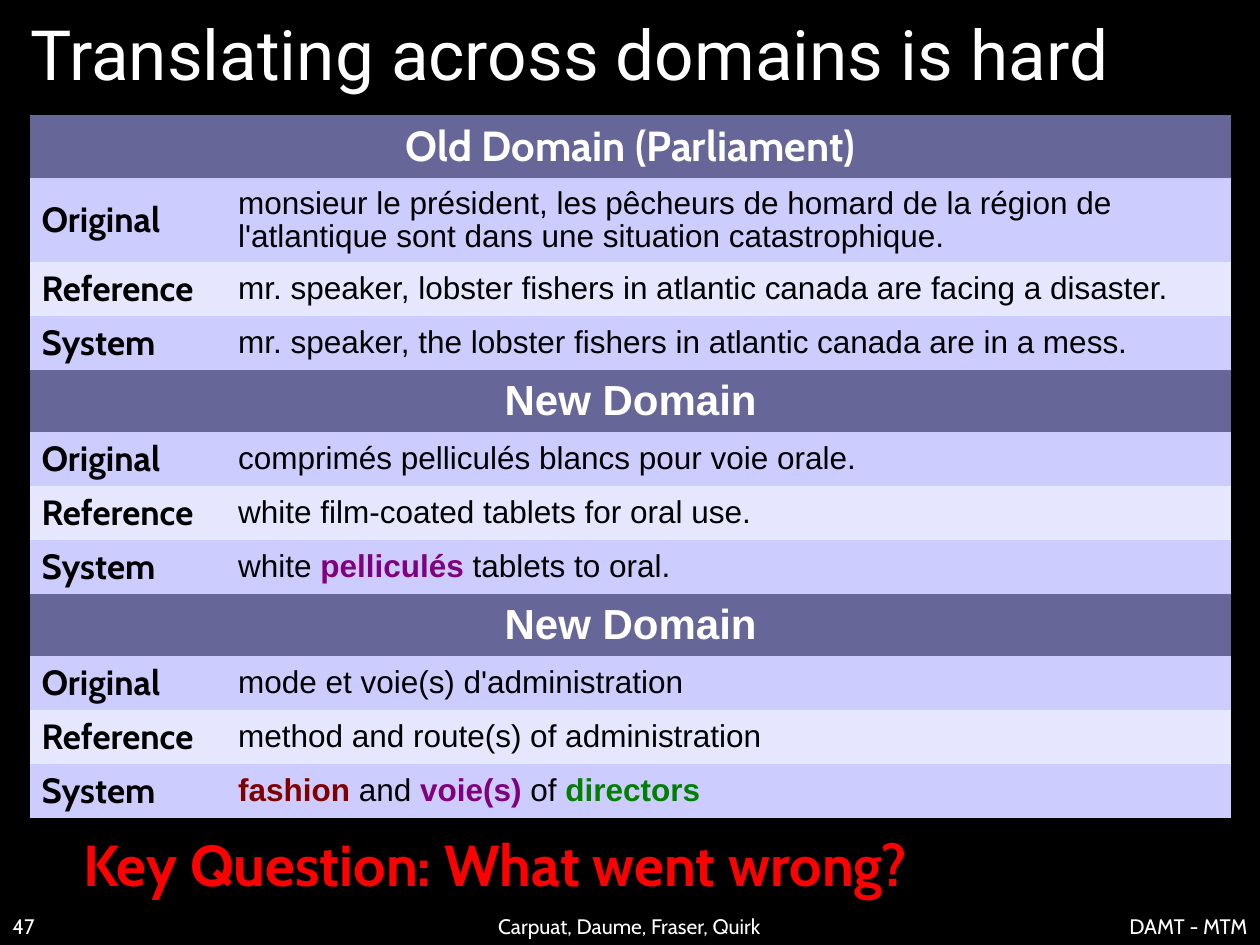
"""Builds a slide comparing translations in an old domain and two new ones."""
from lxml import etree
from pptx import Presentation
from pptx.dml.color import RGBColor
from pptx.enum.text import MSO_ANCHOR, MSO_AUTO_SIZE, PP_ALIGN
from pptx.oxml.ns import qn
from pptx.util import Inches, Pt

LEFT, CENTER, RIGHT = PP_ALIGN.LEFT, PP_ALIGN.CENTER, PP_ALIGN.RIGHT
TOP, MIDDLE, BOTTOM = MSO_ANCHOR.TOP, MSO_ANCHOR.MIDDLE, MSO_ANCHOR.BOTTOM
NO_FIT = MSO_AUTO_SIZE.NONE

BLACK = RGBColor(0x00, 0x00, 0x00)
WHITE = RGBColor(0xFF, 0xFF, 0xFF)
RED = RGBColor(0xFF, 0x00, 0x00)
MAROON = RGBColor(0x80, 0x00, 0x00)
PURPLE = RGBColor(0x80, 0x00, 0x80)
GREEN = RGBColor(0x00, 0x80, 0x00)
HEADER = RGBColor(0x66, 0x66, 0x99)
BANDS = [RGBColor(0xCC, 0xCC, 0xFF), RGBColor(0xE6, 0xE6, 0xFF)]

TITLE = "Translating across domains is hard"
QUESTION = "Key Question: What went wrong?"
LABELS = ["Original", "Reference", "System"]
DOMAINS = [
    ("Old Domain (Parliament)", "Cabin", [
        [("monsieur le président, les pêcheurs de homard de la région de "
          "l'atlantique sont dans une situation catastrophique.", BLACK)],
        [("mr. speaker, lobster fishers in atlantic canada are facing a disaster.", BLACK)],
        [("mr. speaker, the lobster fishers in atlantic canada are in a mess.", BLACK)],
    ]),
    ("New Domain", "Arial", [
        [("comprimés pelliculés blancs pour voie orale.", BLACK)],
        [("white film-coated tablets for oral use.", BLACK)],
        [("white ", BLACK), ("pelliculés", PURPLE), (" tablets to oral.", BLACK)],
    ]),
    ("New Domain", "Arial", [
        [("mode et voie(s) d'administration", BLACK)],
        [("method and route(s) of administration", BLACK)],
        [("fashion", MAROON), (" and ", BLACK), ("voie(s)", PURPLE),
         (" of ", BLACK), ("directors", GREEN)],
    ]),
]
FOOTERS = [
    ("47", 0, 2.33, LEFT),
    ("Carpuat, Daume, Fraser, Quirk", 3.83, 2.33, CENTER),
    ("DAMT - MTM", 6.83, 3.17, RIGHT),
]
COLUMNS = [1.56, 7.97]
HEADER_ROW, TALL_ROW, ROW = 0.49, 0.67, 0.42


def add_run(p, text, size, font, color, bold=False):
    r = p.add_run()
    r.text = text
    r.font.size, r.font.name, r.font.bold = Pt(size), font, bold
    r.font.color.rgb = color


def set_margins(target, left, top, right, bottom):
    target.margin_left, target.margin_top = Inches(left), Inches(top)
    target.margin_right, target.margin_bottom = Inches(right), Inches(bottom)


def style_cell(cell, fill, top, spacing, align=LEFT):
    set_margins(cell, 0.09, top, 0.09, 0.05)
    cell.vertical_anchor = MIDDLE
    cell.fill.solid()
    cell.fill.fore_color.rgb = fill
    props = cell._tc.get_or_add_tcPr()
    for i, side in enumerate(("a:lnL", "a:lnR", "a:lnT", "a:lnB")):
        line = etree.Element(qn(side), w="360")
        solid = etree.SubElement(line, qn("a:solidFill"))
        etree.SubElement(solid, qn("a:srgbClr"), val=str(WHITE))
        props.insert(i, line)
    p = cell.text_frame.paragraphs[0]
    p.alignment, p.line_spacing = align, spacing
    return p


def add_text(s, box, text, size, color, align, anchor, margins, bold=False, wrap=True):
    tf = s.shapes.add_textbox(*map(Inches, box)).text_frame
    tf.word_wrap, tf.auto_size, tf.vertical_anchor = wrap, NO_FIT, anchor
    set_margins(tf, *margins)
    p = tf.paragraphs[0]
    p.alignment = align
    add_run(p, text, size, "Cabin", color, bold)
    return p


def add_title(s):
    sp = s.shapes.title
    sp.left, sp.top, sp.width, sp.height = map(Inches, (0.14, 0.01, 9.78, 0.82))
    tf = sp.text_frame
    tf.auto_size, tf.vertical_anchor = NO_FIT, MIDDLE
    set_margins(tf, 0.1, 0.05, 0.1, 0.05)
    p = tf.paragraphs[0]
    p.alignment = LEFT
    add_run(p, TITLE, 39.6, "Roboto", WHITE)


def add_domains(s):
    step = 1 + len(LABELS)
    heights = [ROW if i % step else HEADER_ROW for i in range(step * len(DOMAINS))]
    heights[1] = TALL_ROW
    box = map(Inches, (0.24, 0.91, sum(COLUMNS), sum(heights)))
    table = s.shapes.add_table(len(heights), len(COLUMNS), *box).table
    for column, width in zip(table.columns, COLUMNS):
        column.width = Inches(width)
    for row, height in zip(table.rows, heights):
        row.height = Inches(height)
    for d, (name, font, sentences) in enumerate(DOMAINS):
        top = d * step
        head = table.cell(top, 0)
        head.merge(table.cell(top, 1))
        margin, spacing = (0.06, 0.97) if font == "Cabin" else (0.07, 0.93)
        add_run(style_cell(head, HEADER, margin, spacing, CENTER), name, 24, font, WHITE, True)
        for i, (label, runs) in enumerate(zip(LABELS, sentences)):
            fill = BANDS[i % 2]
            p = style_cell(table.cell(top + 1 + i, 0), fill, 0.05, 0.97)
            add_run(p, label, 20, "Cabin", BLACK, True)
            p = style_cell(table.cell(top + 1 + i, 1), fill, 0.06, 0.93)
            for text, color in runs:
                add_run(p, text, 18, "Arial", color, color != BLACK)


def main():
    prs = Presentation()
    prs.slide_width, prs.slide_height = Inches(10), Inches(7.5)
    s = prs.slides.add_slide(prs.slide_layouts[5])
    s.background.fill.solid()
    s.background.fill.fore_color.rgb = BLACK
    add_title(s)
    add_domains(s)
    p = add_text(s, (0.57, 6.55, 7.23, 0.62), QUESTION, 33, RED, LEFT, TOP,
                 (0.09, 0.06, 0.09, 0.04), bold=True, wrap=False)
    p.line_spacing = 0.97
    for text, left, width, align in FOOTERS:
        add_text(s, (left, 7.1, width, 0.4), text, 12, WHITE, align, BOTTOM,
                 (0.1, 0.05, 0.1, 0.05))
    prs.save("out.pptx")


if __name__ == "__main__":
    main()
